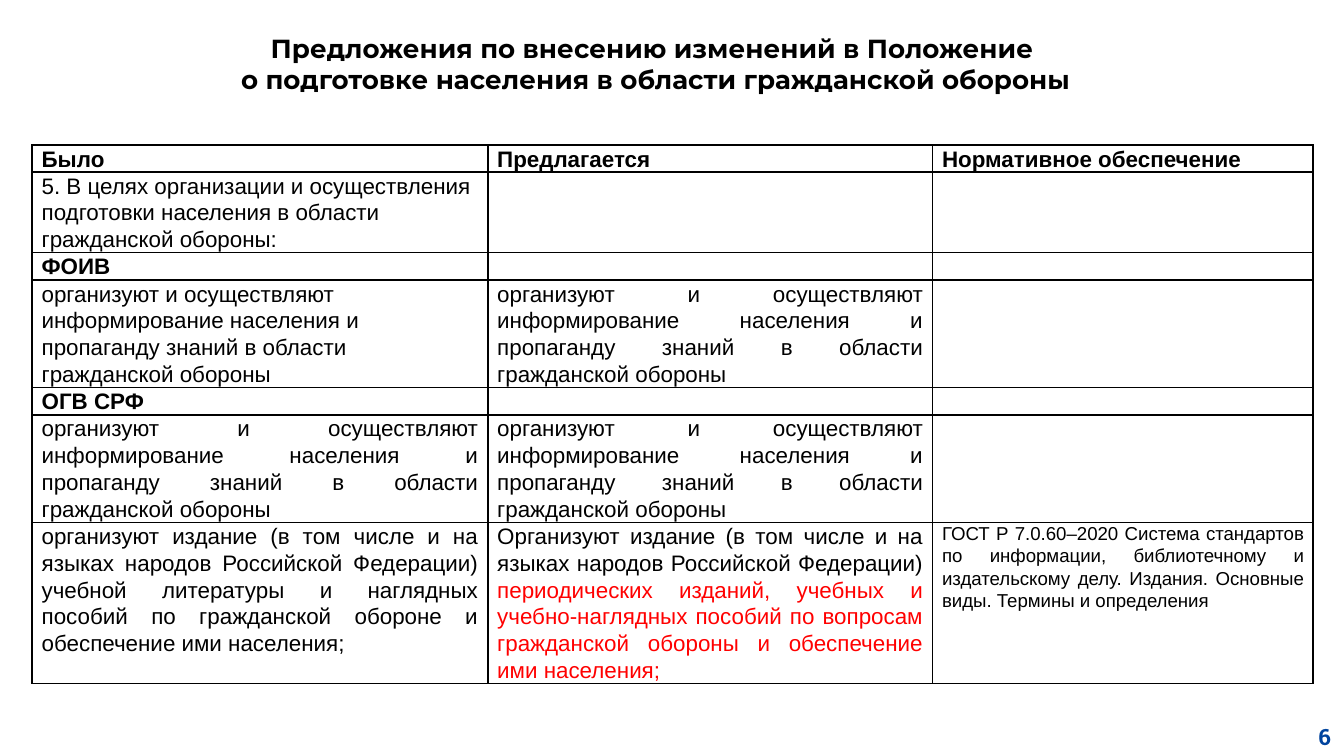
from lxml.etree import SubElement
from pptx import Presentation
from pptx.dml.color import RGBColor
from pptx.enum.text import MSO_ANCHOR, PP_ALIGN
from pptx.oxml import parse_xml
from pptx.oxml.ns import nsdecls, qn
from pptx.util import Inches, Pt

BLACK = RGBColor(0x00, 0x00, 0x00)
WHITE = RGBColor(0xFF, 0xFF, 0xFF)
RED = RGBColor(0xFF, 0x00, 0x00)
BLUE = RGBColor(0x00, 0x44, 0x9E)
LEFT, JUSTIFY = PP_ALIGN.LEFT, PP_ALIGN.JUSTIFY


def write(para, text, size=12, font="Arial", color=BLACK, bold=False, align=LEFT, spacing=1.0):
    para.alignment = align
    para.line_spacing = spacing
    span = para.add_run()
    span.text = text
    span.font.size = Pt(size)
    span.font.name = font
    span.font.bold = bold
    span.font.color.rgb = color


def add_borders(cell, width=Pt(1)):
    for position, side in enumerate(("lnL", "lnR", "lnT", "lnB")):
        cell._tc.get_or_add_tcPr().insert(position, parse_xml(
            f'<a:{side} {nsdecls("a")} w="{width}"><a:solidFill>'
            f'<a:srgbClr val="{BLACK}"/></a:solidFill></a:{side}>'))


deck = Presentation()
deck.slide_width = Inches(10)
deck.slide_height = deck.slide_width * 9 // 16
page = deck.slides.add_slide(deck.slide_layouts[5])

# Title
title = page.shapes.title
title.left, title.top = Inches(0.59), Inches(0.19)
title.width, title.height = Inches(8.58), Inches(0.57)
frame = title.text_frame
frame.word_wrap = True
frame.vertical_anchor = MSO_ANCHOR.TOP
heading = dict(size=14, font="Montserrat", bold=True, align=PP_ALIGN.CENTER)
write(frame.paragraphs[0], "Предложения по внесению изменений в Положение ", **heading)
write(frame.add_paragraph(), "о подготовке населения в области гражданской обороны", **heading)

# Comparison table: each cell is an alignment, a size, and (text, bold, colour) spans
INFORMING = ("организуют и осуществляют информирование населения и пропаганду "
             "знаний в области гражданской обороны")
informing_justified = (JUSTIFY, 12, [(INFORMING, False, BLACK)])
rows = [
    [(LEFT, 12, [(name, True, BLACK)])
     for name in ("Было", "Предлагается", "Нормативное обеспечение")],
    [(LEFT, 12, [("5. В целях организации и осуществления подготовки населения "
                  "в области гражданской обороны:", False, BLACK)])],
    [(LEFT, 12, [("ФОИВ", True, BLACK)])],
    [(LEFT, 12, [(INFORMING, False, BLACK)]), informing_justified],
    [(JUSTIFY, 12, [("ОГВ СРФ", True, BLACK)])],
    [informing_justified, informing_justified],
    [(JUSTIFY, 12, [("организуют издание (в том числе и на языках народов Российской "
                     "Федерации) учебной литературы и наглядных пособий по гражданской "
                     "обороне и обеспечение ими населения;", False, BLACK)]),
     (JUSTIFY, 12, [("Организуют издание (в том числе и на языках народов Российской "
                     "Федерации) ", False, BLACK),
                    ("периодических изданий, учебных и учебно-наглядных пособий по вопросам "
                     "гражданской обороны и обеспечение ими населения;", False, RED)]),
     (JUSTIFY, 10, [("ГОСТ Р 7.0.60–2020 Система стандартов по информации, библиотечному "
                     "и издательскому делу. Издания. Основные виды. Термины и определения",
                     False, BLACK)])],
]
column_widths = [3.39, 3.31, 2.83]
row_lines = [1, 3, 1, 4, 1, 4, 6]
LINE_HEIGHT = 0.2

table = page.shapes.add_table(
    len(rows), len(column_widths), Inches(0.24), Inches(1.08),
    Inches(sum(column_widths)), Inches(LINE_HEIGHT * sum(row_lines))).table
table.first_row = table.horz_banding = False
for column, width in zip(table.columns, column_widths):
    column.width = Inches(width)

for row, lines, contents in zip(table.rows, row_lines, rows):
    row.height = Inches(LINE_HEIGHT * lines)
    for index, cell in enumerate(row.cells):
        cell.margin_left = cell.margin_right = Inches(0.07)
        cell.margin_top = cell.margin_bottom = 0
        cell.fill.solid()
        cell.fill.fore_color.rgb = WHITE
        add_borders(cell)
        para = cell.text_frame.paragraphs[0]
        if index < len(contents):
            align, size, spans = contents[index]
            for text, bold, color in spans:
                write(para, text, size=size, bold=bold, color=color, align=align, spacing=1.07)
        else:
            # An empty cell needs a small font so that its row stays low
            SubElement(para._p, qn("a:endParaRPr"), sz="1200")

# Page number
box = page.shapes.add_textbox(Inches(9.41), Inches(5.33), Inches(0.59), Inches(0.29))
box.text_frame.word_wrap = True
write(box.text_frame.paragraphs[0], "6", font="Roboto Slab", color=BLUE, bold=True,
      align=PP_ALIGN.RIGHT)

deck.save("out.pptx")
